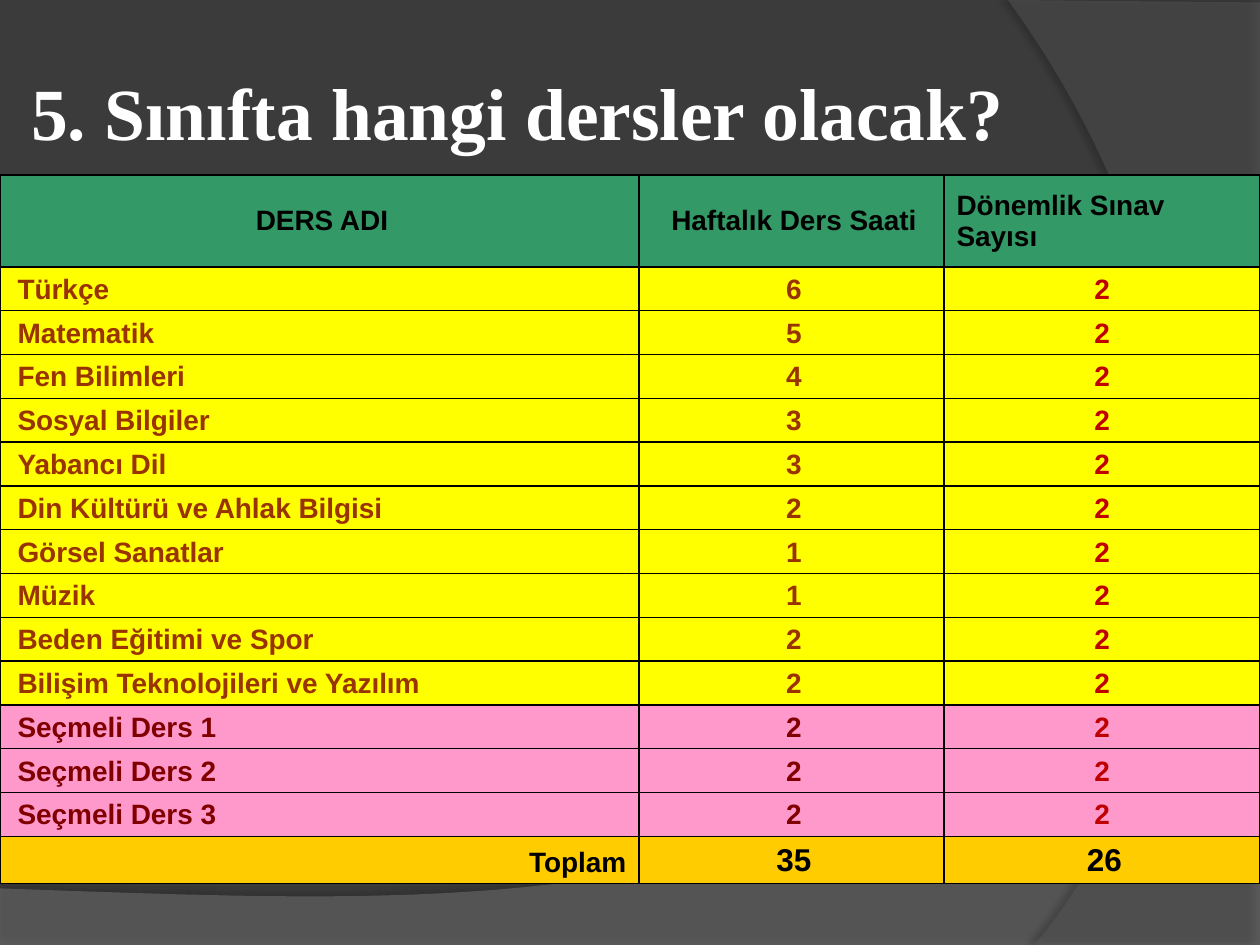
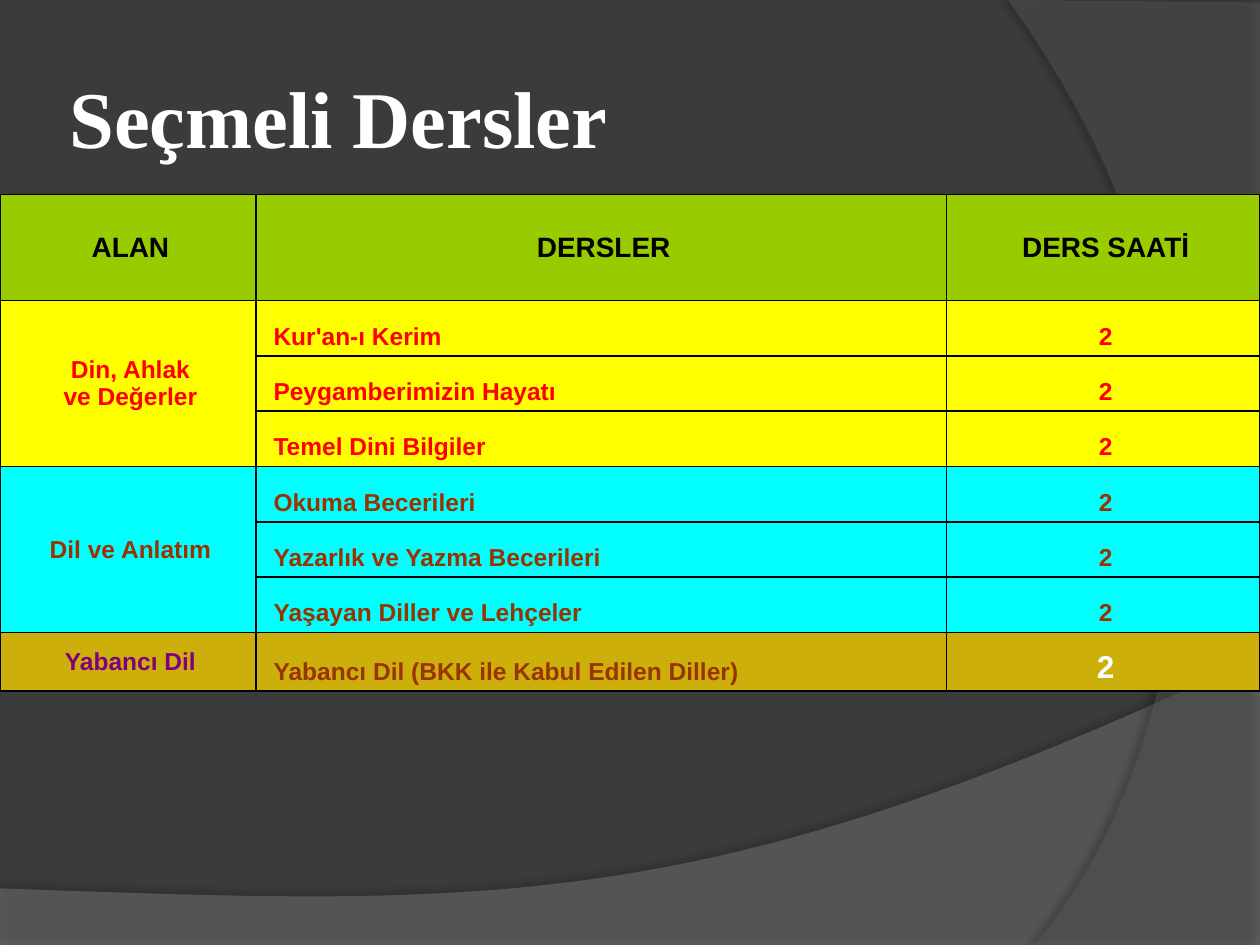
from collections import namedtuple

from lxml import etree
from pptx import Presentation, util as u
from pptx.dml.color import RGBColor
from pptx.enum import text
from pptx.oxml.ns import qn

COLORS = {
    "background": "3B3B3B", "wave": "7F7F7F", "arc": "5E5E5E",
    "black": "000000", "white": "FFFFFF", "green": "339966", "lime": "99CC00",
    "yellow": "FFFF00", "pink": "FF99CC", "amber": "FFCC00", "cyan": "00FFFF",
    "gold": "CCAF0A", "brown": "993300", "maroon": "800000",
    "crimson": "C00000", "red": "FF0000", "purple": "800080",
}
TITLE_FONT, TABLE_FONT = "Times New Roman", "Arial"
LEFT, CENTER, RIGHT = (text.PP_ALIGN.LEFT, text.PP_ALIGN.CENTER,
                       text.PP_ALIGN.RIGHT)
MIDDLE, BOTTOM = text.MSO_ANCHOR.MIDDLE, text.MSO_ANCHOR.BOTTOM

Box = namedtuple("Box", "left top width height")  # centimetres

COURSES = [
    ("Türkçe", 6), ("Matematik", 5), ("Fen Bilimleri", 4),
    ("Sosyal Bilgiler", 3), ("Yabancı Dil", 3),
    ("Din Kültürü ve Ahlak Bilgisi", 2), ("Görsel Sanatlar", 1), ("Müzik", 1),
    ("Beden Eğitimi ve Spor", 2), ("Bilişim Teknolojileri ve Yazılım", 2),
]
ELECTIVES = [(f"Seçmeli Ders {number}", 2) for number in (1, 2, 3)]
EXAMS_PER_TERM = 2

# area, fill, area colour, course colour, hour colour, hour size, courses
AREAS = [
    ("Din, Ahlak\nve Değerler", "yellow", "red", "red", "red", 14,
     ["Kur'an-ı Kerim", "Peygamberimizin Hayatı", "Temel Dini Bilgiler"]),
    ("Dil ve Anlatım", "cyan", "brown", "brown", "brown", 14,
     ["Okuma Becerileri", "Yazarlık ve Yazma Becerileri",
      "Yaşayan Diller ve Lehçeler"]),
    ("Yabancı Dil", "gold", "purple", "brown", "white", 18,
     ["Yabancı Dil (BKK ile Kabul Edilen Diller)"]),
]
HOURS_PER_ELECTIVE = 2


def rgb(name):
    return RGBColor.from_string(COLORS[name])


def bezier(start, control1, control2, end, steps=40):
    """Points of a cubic curve after its start."""
    points = []
    for step in range(1, steps + 1):
        t = step / steps
        weights = ((1 - t) ** 3, 3 * t * (1 - t) ** 2, 3 * t * t * (1 - t), t ** 3)
        points.append(tuple(
            sum(w * p[axis] for w, p in zip(weights, (start, control1, control2, end)))
            for axis in (0, 1)))
    return points


# Shared backdrop
def add_backdrop_curve(prs, slide, position, outline, fill, opacity,
                       shadow_opacity, shadow_distance, shadow_angle):
    """Draw a translucent outline and move it to the slide master."""
    points = [(u.Cm(x), u.Cm(y)) for x, y in outline]
    builder = slide.shapes.build_freeform(*points[0], scale=1.0)
    builder.add_line_segments(points[1:], close=True)
    curve = builder.convert_to_shape()
    curve.fill.solid()
    curve.fill.fore_color.rgb = rgb(fill)
    curve.line.fill.background()
    curve.shadow.inherit = False
    properties = curve.element.spPr
    etree.SubElement(properties.find(qn("a:solidFill"))[0], qn("a:alpha"),
                     val=str(opacity * 1000))
    shadow = etree.SubElement(
        properties.find(qn("a:effectLst")), qn("a:outerShdw"),
        blurRad=str(u.Pt(4)), dist=str(u.Pt(shadow_distance)),
        dir=str(shadow_angle * 60000), algn="ctr", rotWithShape="0")
    tint = etree.SubElement(shadow, qn("a:srgbClr"), val=COLORS["black"])
    etree.SubElement(tint, qn("a:alpha"), val=str(shadow_opacity * 1000))
    curve.element.nvSpPr.cNvPr.set("id", str(100 + position))
    prs.slide_master.shapes.element.insert(position, curve.element)


def build_backdrop(prs, slide, box):
    background = prs.slide_master.background.fill
    background.solid()
    background.fore_color.rgb = rgb("background")
    right, bottom = box.left + box.width, box.top + box.height
    wave_start = (right, box.top + 13.21)
    wave = [(box.left, box.top + 17.91), (box.left, bottom), (right, bottom),
            wave_start]
    wave += bezier(wave_start, (box.left + 14.2, box.top + 18.52),
                   (box.left + 9.93, box.top + 18.26), wave[0])
    add_backdrop_curve(prs, slide, 2, wave, "wave", 45, 35, 3.5, 270)
    arc_start = (box.left + 20.85, bottom)
    arc = [(right, box.top + 0.05), (right, bottom), arc_start]
    arc += bezier(arc_start, (box.left + 23.75, box.top + 15.72),
                  (box.left + 25.86, box.top + 7.62), (box.left + 20.32, box.top))
    add_backdrop_curve(prs, slide, 3, arc, "arc", 40, 45, 4, 180)


# Titles
def write_title(slide, box, wording, size):
    title = slide.shapes.title
    title.left, title.top, title.width, title.height = map(u.Cm, box)
    frame = title.text_frame
    frame.text = wording
    frame.word_wrap = True
    frame.auto_size = text.MSO_AUTO_SIZE.NONE
    frame.vertical_anchor = MIDDLE
    frame.margin_left = frame.margin_right = u.Cm(0.13)
    frame.margin_top = frame.margin_bottom = u.Cm(0.13)
    heading = frame.paragraphs[0]
    heading.alignment = LEFT
    set_font(heading.font, TITLE_FONT, size, "white")


def set_font(font, name, size, color):
    font.name, font.size, font.bold = name, u.Pt(size), True
    font.color.rgb = rgb(color)


# Tables
def add_grid(slide, box, widths, row_count, header_height, last_height):
    """Table whose middle rows share the height left by the first and last."""
    grid = slide.shapes.add_table(row_count, len(widths), *map(u.Cm, box)).table
    grid.first_row = grid.horz_banding = False
    for column, width in zip(grid.columns, widths):
        column.width = u.Cm(width)
    middle = (box.height - header_height - last_height) / (row_count - 2)
    heights = [header_height] + [middle] * (row_count - 2) + [last_height]
    for row, height in zip(grid.rows, heights):
        row.height = u.Cm(height)
    return grid


def write_cell(cell, wording, fill, color="black", size=16, align=CENTER,
               anchor=BOTTOM, hanging=True):
    properties = cell._tc.get_or_add_tcPr()
    for side in "LRTB":
        border = etree.SubElement(properties, qn(f"a:ln{side}"), w=str(u.Pt(1)))
        stroke = etree.SubElement(border, qn("a:solidFill"))
        etree.SubElement(stroke, qn("a:srgbClr"), val=COLORS["black"])
    cell.fill.solid()
    cell.fill.fore_color.rgb = rgb(fill)
    cell.margin_top = cell.margin_bottom = u.Cm(0.11)
    cell.vertical_anchor = anchor
    cell.text_frame.text = str(wording)
    for paragraph in cell.text_frame.paragraphs:
        paragraph.alignment = align
        set_font(paragraph.font, TABLE_FONT, size, color)
        if hanging:
            indents = paragraph._p.get_or_add_pPr()
            indents.set("marL", str(u.Cm(1.17)))
            indents.set("indent", str(u.Cm(-1.07)))


def build_course_table(slide, box):
    groups = [(COURSES, "yellow", "brown"), (ELECTIVES, "pink", "maroon")]
    lessons = [(name, hours, fill, color)
               for group, fill, color in groups for name, hours in group]
    grid = add_grid(slide, box, (12.88, 6.15, 6.37), len(lessons) + 2, 1.85, 0.95)
    # Header
    write_cell(grid.cell(0, 0), "DERS ADI", "green", anchor=MIDDLE)
    write_cell(grid.cell(0, 1), "Haftalık Ders Saati", "green", anchor=MIDDLE)
    write_cell(grid.cell(0, 2), "Dönemlik Sınav Sayısı", "green", align=LEFT,
               anchor=MIDDLE, hanging=False)
    # Lessons
    for row, (name, hours, fill, color) in enumerate(lessons, 1):
        write_cell(grid.cell(row, 0), name, fill, color, align=LEFT)
        write_cell(grid.cell(row, 1), hours, fill, color)
        write_cell(grid.cell(row, 2), EXAMS_PER_TERM, fill, "crimson", hanging=False)
    # Totals
    total_row = len(lessons) + 1
    total_hours = sum(lesson[1] for lesson in lessons)
    write_cell(grid.cell(total_row, 0), "Toplam", "amber", align=RIGHT)
    write_cell(grid.cell(total_row, 1), total_hours, "amber", size=18)
    write_cell(grid.cell(total_row, 2), EXAMS_PER_TERM * len(lessons), "amber",
               size=18)


def build_elective_table(slide, box):
    row_count = 1 + sum(len(area[-1]) for area in AREAS)
    grid = add_grid(slide, box, (5.16, 13.92, 6.32), row_count, 2.14, 1.18)
    # Header
    for column, heading in enumerate(("ALAN", "DERSLER", "DERS SAATİ")):
        write_cell(grid.cell(0, column), heading, "lime", anchor=MIDDLE)
    # Areas with their courses
    row = 1
    for area, fill, area_color, color, hour_color, hour_size, courses in AREAS:
        area_cell = grid.cell(row, 0)
        if len(courses) > 1:
            area_cell.merge(grid.cell(row + len(courses) - 1, 0))
        write_cell(area_cell, area, fill, area_color, 14, anchor=MIDDLE)
        for offset, course in enumerate(courses):
            if offset:
                write_cell(grid.cell(row + offset, 0), "", fill)
            write_cell(grid.cell(row + offset, 1), course, fill, color, 14, LEFT)
            write_cell(grid.cell(row + offset, 2), HOURS_PER_ELECTIVE, fill,
                       hour_color, hour_size)
        row += len(courses)


def main():
    prs = Presentation()
    prs.slide_width, prs.slide_height = u.Cm(25.4), u.Cm(19.05)
    title_only = prs.slide_layouts[5]

    # Weekly courses
    courses = prs.slides.add_slide(title_only)
    build_backdrop(prs, courses, Box(0, 0, 25.4, 19.05))
    write_title(courses, Box(0.5, 0.53, 24, 3.4),
                "5. Sınıfta hangi dersler olacak?", 42)
    build_course_table(courses, Box(0, 3.53, 25.4, 14.29))

    # Elective courses
    electives = prs.slides.add_slide(title_only)
    write_title(electives, Box(1.27, 0.76, 20.75, 3.18), "Seçmeli Dersler", 46)
    build_elective_table(electives, Box(0, 3.92, 25.4, 10.01))

    prs.save("out.pptx")


if __name__ == "__main__":
    main()
